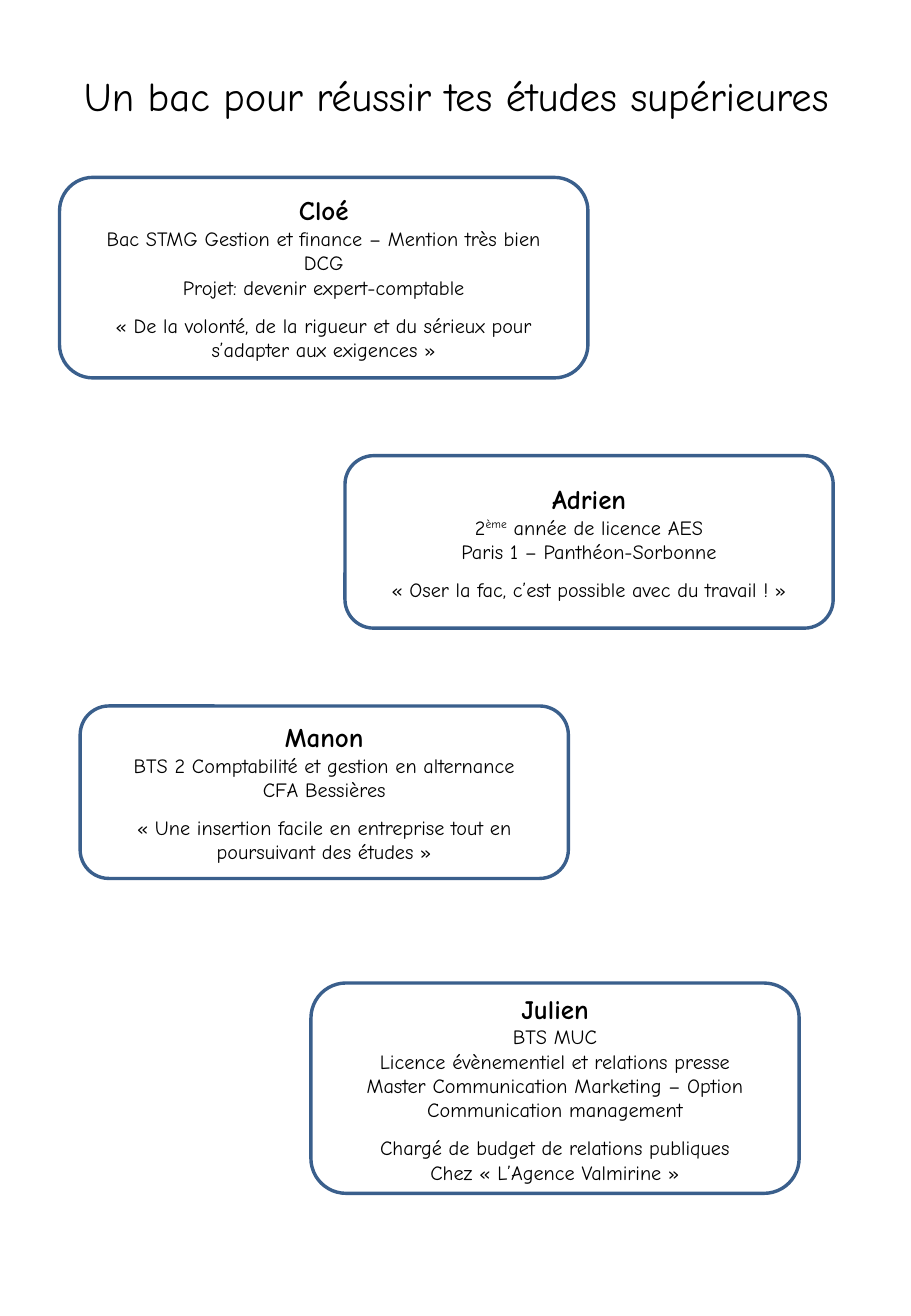
from dataclasses import dataclass

from pptx import Presentation
from pptx.dml.color import RGBColor
from pptx.enum.shapes import MSO_SHAPE as Shape
from pptx.enum.text import MSO_ANCHOR as Anchor, PP_ALIGN as Align
from pptx.slide import Slide
from pptx.text.text import TextFrame
from pptx.util import Pt

BLACK = RGBColor(0, 0, 0)
BLUE = RGBColor(0x3A, 0x5F, 0x8C)
FONT = "Comic Neue"
QUOTE_GAP = 8.1


@dataclass
class Student:
    name: str
    left: float
    top: float
    width: float
    height: float
    studies: list[str]
    closing: list[str]


STUDENTS = [
    Student("Cloé", 35.3, 105.1, 313.2, 118.8,
            ["Bac STMG Gestion et finance – Mention très bien", "DCG",
             "Projet: devenir expert-comptable"],
            ["« De la volonté, de la rigueur et du sérieux pour s’adapter aux exigences »"]),
    Student("Adrien", 204.5, 270, 289.4, 102.2,
            ["2^ème^ année de licence AES", "Paris 1 – Panthéon-Sorbonne"],
            ["« Oser la fac, c’est possible avec du travail ! »"]),
    Student("Manon", 47.5, 418.3, 289.4, 102.2,
            ["BTS 2 Comptabilité et gestion en alternance", "CFA Bessières"],
            ["« Une insertion facile en entreprise tout en poursuivant des études »"]),
    Student("Julien", 184.3, 582.5, 289.4, 124.6,
            ["BTS MUC", "Licence évènementiel et relations presse",
             "Master Communication Marketing – Option Communication management"],
            ["Chargé de budget de relations publiques", "Chez « L’Agence Valmirine »"]),
]


def add_line(tf: TextFrame, text: str, size: float, bold: bool = False,
             before: float = 0, first: bool = False) -> None:
    p = tf.paragraphs[0] if first else tf.add_paragraph()
    p.alignment = Align.CENTER
    p.space_before = Pt(before)
    for i, part in enumerate(text.split("^")):
        r = p.add_run()
        r.text = part
        for key, value in {"name": FONT, "size": Pt(size), "bold": bold}.items():
            setattr(r.font, key, value)
        r.font.color.rgb = BLACK
        if i % 2:
            r._r.get_or_add_rPr().set("baseline", "30000")


def prepare(tf: TextFrame) -> None:
    for key, value in {"word_wrap": True, "vertical_anchor": Anchor.MIDDLE}.items():
        setattr(tf, key, value)


def add_title(s: Slide, text: str) -> None:
    tf = s.shapes.add_textbox(Pt(27.4), Pt(35.3), Pt(486), Pt(41.8)).text_frame
    prepare(tf)
    add_line(tf, text, 24, first=True)


def add_card(s: Slide, student: Student) -> None:
    box = (student.left, student.top, student.width, student.height)
    sp = s.shapes.add_shape(Shape.ROUNDED_RECTANGLE, *map(Pt, box))
    sp.shadow.inherit = False
    sp.fill.background()
    sp.line.color.rgb = BLUE
    sp.line.width = Pt(2)
    tf = sp.text_frame
    prepare(tf)
    add_line(tf, student.name, 16, bold=True, first=True)
    for text in student.studies:
        add_line(tf, text, 12)
    for i, text in enumerate(student.closing):
        add_line(tf, text, 12, before=0 if i else QUOTE_GAP)


def main() -> None:
    prs = Presentation()
    prs.slide_width, prs.slide_height = Pt(540), Pt(779.76)
    s = prs.slides.add_slide(prs.slide_layouts[6])
    add_title(s, "Un bac pour réussir tes études supérieures")
    for student in STUDENTS:
        add_card(s, student)
    prs.save("out.pptx")


if __name__ == "__main__":
    main()
